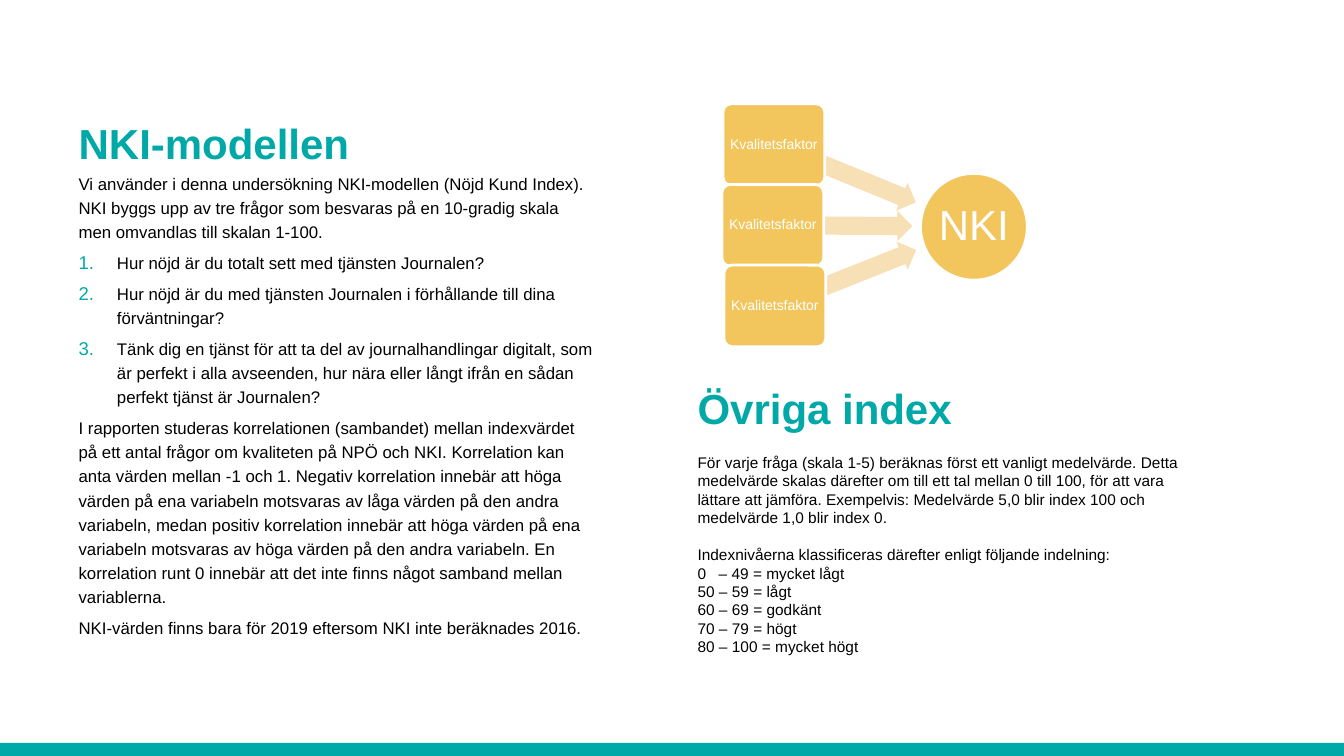
from lxml.etree import SubElement
from pptx import Presentation
from pptx.dml.color import RGBColor
from pptx.enum.shapes import MSO_SHAPE
from pptx.enum.text import MSO_ANCHOR, MSO_AUTO_SIZE, PP_ALIGN
from pptx.oxml.ns import qn
from pptx.util import Inches, Pt

TEAL = RGBColor(0x00, 0xA9, 0xA7)
YELLOW = RGBColor(0xF2, 0xC6, 0x5D)
SAND = RGBColor(0xF7, 0xDF, 0xB6)
BLACK = RGBColor(0, 0, 0)
WHITE = RGBColor(255, 255, 255)


def write(text_frame, text, size=12, color=BLACK, bold=False, align=PP_ALIGN.LEFT,
          spacing=1.0, before=0, after=0):
    """Fill the empty first paragraph, or add a new one, and return it."""
    paragraph = text_frame.paragraphs[0]
    if paragraph.runs:
        paragraph = text_frame.add_paragraph()
    paragraph.alignment = align
    paragraph.line_spacing = spacing
    paragraph.space_before = Pt(before)
    paragraph.space_after = Pt(after)
    run = paragraph.add_run()
    run.text = text
    run.font.name = "Arial"
    run.font.size = Pt(size)
    run.font.bold = bold
    run.font.color.rgb = color
    return paragraph


def add_filled_shape(kind, left, top, width, height, fill, outlined=False):
    shape = slide.shapes.add_shape(kind, Inches(left), Inches(top), Inches(width), Inches(height))
    shape.shadow.inherit = False
    shape.fill.solid()
    shape.fill.fore_color.rgb = fill
    if outlined:
        shape.line.color.rgb = WHITE
        shape.line.width = Pt(2)
    else:
        shape.line.fill.background()
    text_frame = shape.text_frame
    text_frame.word_wrap = True
    text_frame.vertical_anchor = MSO_ANCHOR.MIDDLE
    text_frame.margin_left = text_frame.margin_right = Inches(0.02)
    text_frame.margin_top = text_frame.margin_bottom = Inches(0.02)
    return shape


presentation = Presentation()
presentation.slide_width = Inches(13.33)
presentation.slide_height = Inches(7.5)
slide = presentation.slides.add_slide(presentation.slide_layouts[1])

add_filled_shape(MSO_SHAPE.RECTANGLE, 0, 7.37, 13.33, 0.13, TEAL)

# Title and body
title = slide.shapes.title
body = slide.placeholders[1]
for placeholder, top, width, height, anchor in (
    (title, 0.22, 11.5, 1.45, MSO_ANCHOR.BOTTOM),
    (body, 1.68, 5.11, 4.84, MSO_ANCHOR.TOP),
):
    placeholder.left, placeholder.top = Inches(0.78), Inches(top)
    placeholder.width, placeholder.height = Inches(width), Inches(height)
    text_frame = placeholder.text_frame
    text_frame.word_wrap = True
    text_frame.auto_size = MSO_AUTO_SIZE.NONE
    text_frame.vertical_anchor = anchor
    text_frame.margin_left = text_frame.margin_right = 0
    text_frame.margin_top = text_frame.margin_bottom = 0

write(title.text_frame, "NKI-modellen", size=30, color=TEAL, bold=True)

body_paragraphs = [
    (False, "Vi använder i denna undersökning NKI-modellen (Nöjd Kund Index). NKI byggs upp av "
            "tre frågor som besvaras på en 10-gradig skala men omvandlas till skalan 1-100."),
    (True, "Hur nöjd är du totalt sett med tjänsten Journalen?"),
    (True, "Hur nöjd är du med tjänsten Journalen i förhållande till dina förväntningar?"),
    (True, "Tänk dig en tjänst för att ta del av journalhandlingar digitalt, som är perfekt i "
           "alla avseenden, hur nära eller långt ifrån en sådan perfekt tjänst är Journalen?"),
    (False, "I rapporten studeras korrelationen (sambandet) mellan indexvärdet på ett antal "
            "frågor om kvaliteten på NPÖ och NKI. Korrelation kan anta värden mellan -1 och 1. "
            "Negativ korrelation innebär att höga värden på ena variabeln motsvaras av låga "
            "värden på den andra variabeln, medan positiv korrelation innebär att höga värden "
            "på ena variabeln motsvaras av höga värden på den andra variabeln. En korrelation "
            "runt 0 innebär att det inte finns något samband mellan variablerna."),
    (False, "NKI-värden finns bara för 2019 eftersom NKI inte beräknades 2016."),
]
for index, (numbered, text) in enumerate(body_paragraphs):
    paragraph = write(body.text_frame, text, spacing=1.2, before=2.4 if index else 0, after=2.4)
    properties = paragraph._p.get_or_add_pPr()
    indent = Inches(0.38) if numbered else 0
    properties.set("marL", str(indent))
    properties.set("indent", str(-indent))
    if numbered:
        bullet_color = SubElement(properties, qn("a:buClr"))
        SubElement(bullet_color, qn("a:srgbClr"), val=str(TEAL))
        SubElement(properties, qn("a:buSzPct"), val="110000")
        SubElement(properties, qn("a:buFont"), typeface="+mj-lt")
        SubElement(properties, qn("a:buAutoNum"), type="arabicPeriod")
    else:
        SubElement(properties, qn("a:buNone"))

# Model: three quality factors pointing to NKI
circle = add_filled_shape(MSO_SHAPE.OVAL, 9.13, 1.72, 1.06, 1.06, YELLOW, outlined=True)
write(circle.text_frame, "NKI", size=30, color=WHITE, align=PP_ALIGN.CENTER, spacing=0.9)

factors = [  # box left, arrow left, arrow top, arrow width, arrow rotation
    (7.17, 7.62, 1.57, 1.52, 22.3),
    (7.16, 7.67, 2.09, 1.38, 0.3),
    (7.18, 7.63, 2.61, 1.51, -21.7),
]
for row, (box_left, arrow_left, arrow_top, arrow_width, rotation) in enumerate(factors):
    arrow = add_filled_shape(MSO_SHAPE.RIGHT_ARROW, arrow_left, arrow_top, arrow_width, 0.3, SAND)
    arrow.adjustments[0] = 0.6
    arrow.adjustments[1] = 0.5
    arrow.rotation = rotation
    box = add_filled_shape(MSO_SHAPE.ROUNDED_RECTANGLE, box_left, 1.03 + 0.8 * row, 1.01, 0.81,
                           YELLOW, outlined=True)
    box.adjustments[0] = 0.1
    write(box.text_frame, "Kvalitetsfaktor", size=10, color=WHITE, align=PP_ALIGN.CENTER,
          spacing=0.9)

# Other indexes
index_box = slide.shapes.add_textbox(Inches(6.82), Inches(3.75), Inches(5.11), Inches(2.9))
index_text = index_box.text_frame
index_text.word_wrap = True
write(index_text, "Övriga index", size=30, color=TEAL, bold=True)
write(index_text, "För varje fråga (skala 1-5) beräknas först ett vanligt medelvärde. Detta "
      "medelvärde skalas därefter om till ett tal mellan 0 till 100, för att vara lättare att "
      "jämföra. Exempelvis: Medelvärde 5,0 blir index 100 och medelvärde 1,0 blir index 0.",
      size=11, before=14)
write(index_text, "Indexnivåerna klassificeras därefter enligt följande indelning:",
      size=11, before=13)
for level in ("0\t– 49 = mycket lågt", "50 – 59 = lågt", "60 – 69 = godkänt",
              "70 – 79 = högt", "80 – 100 = mycket högt"):
    paragraph = write(index_text, level, size=11)
    if "\t" in level:
        tab_list = SubElement(paragraph._p.get_or_add_pPr(), qn("a:tabLst"))
        SubElement(tab_list, qn("a:tab"), pos=str(Inches(0.21)), algn="l")

presentation.save("out.pptx")
